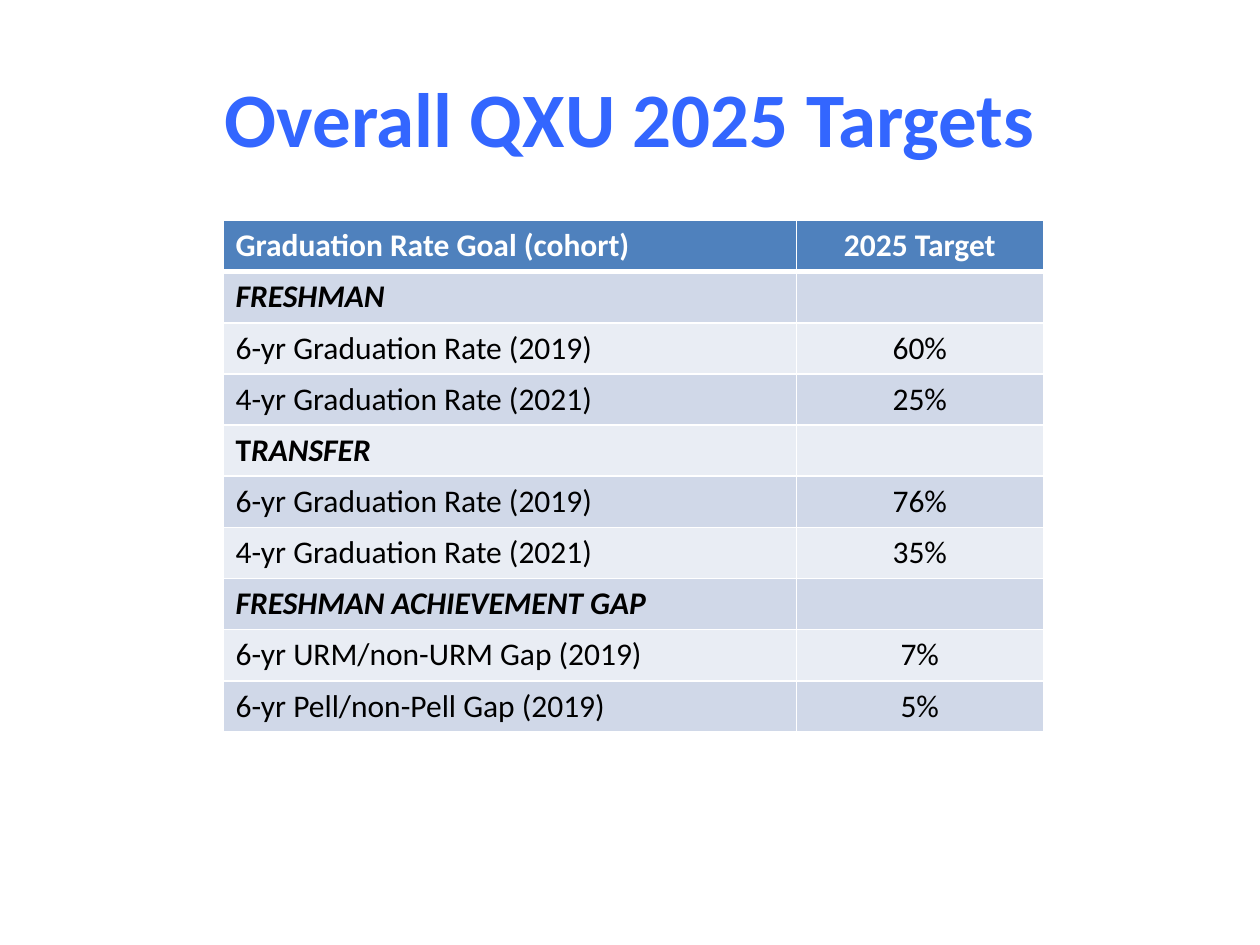
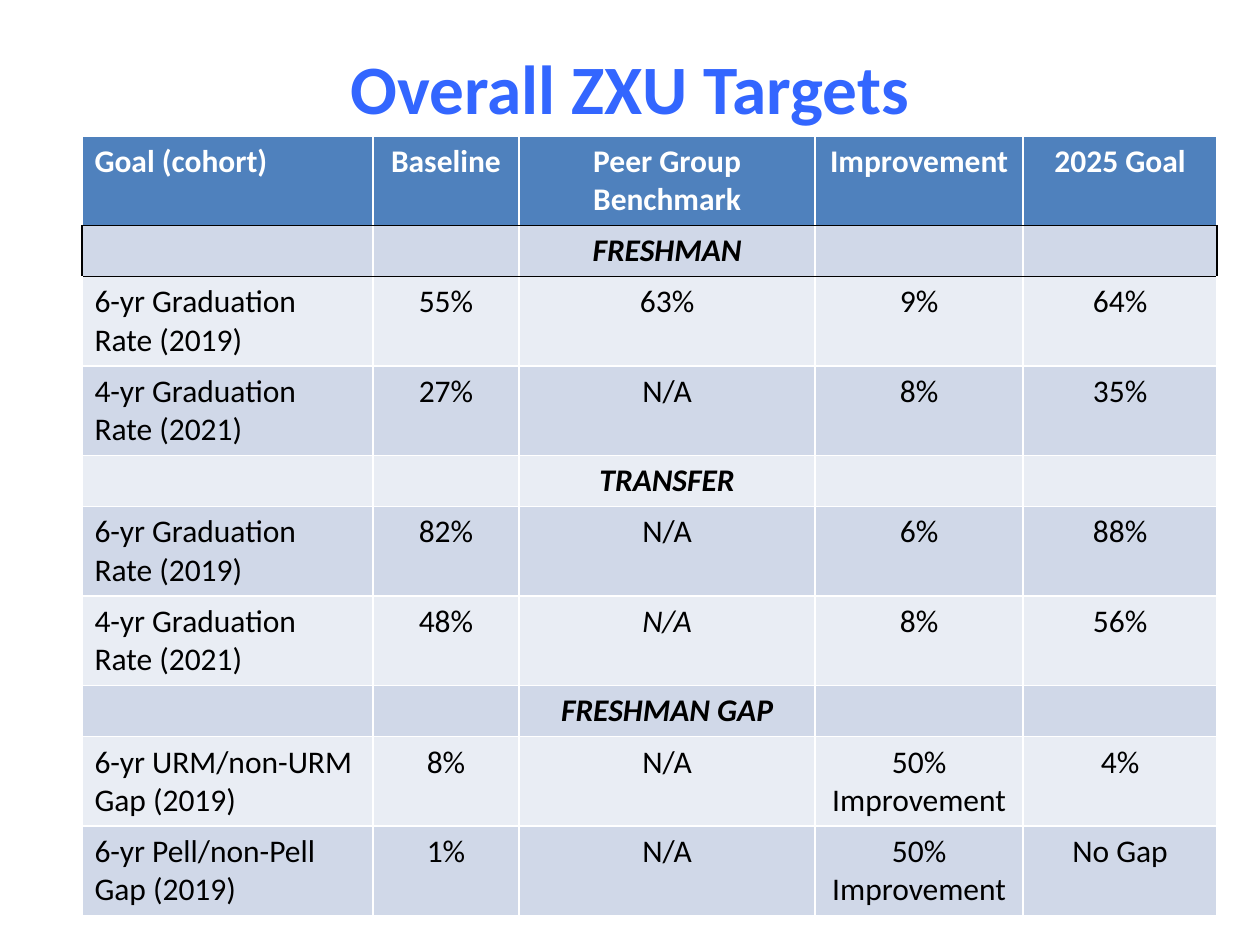
from lxml.etree import SubElement
from pptx import Presentation
from pptx.dml.color import RGBColor
from pptx.enum.text import MSO_ANCHOR, PP_ALIGN
from pptx.oxml.ns import qn
from pptx.util import Inches, Pt

COLORS = {"title": "3366FF", "header": "4F81BD", "odd": "D0D8E8",
          "even": "E9EDF4", "white": "FFFFFF", "black": "000000"}
FONT = "Calibri"
BODY_SIZE = 18
GRID_COLUMNS, GRID_ROWS = 100, 75


class TargetDeck:
    """Holds the style and the current slide; lengths are grid units."""

    def __init__(self):
        self.deck = Presentation()
        self.deck.slide_width, self.deck.slide_height = Inches(10), Inches(7.5)
        self.page = None

    def columns(self, count):
        return round(self.deck.slide_width * count / GRID_COLUMNS)

    def rows(self, count):
        return round(self.deck.slide_height * count / GRID_ROWS)

    def add_page(self):
        self.page = self.deck.slides.add_slide(self.deck.slide_layouts[6])

    def format_span(self, span, size, color, bold, italic=False):
        span.font.name, span.font.size = FONT, Pt(size)
        span.font.bold, span.font.italic = bold, italic
        span.font.color.rgb = RGBColor.from_string(COLORS[color])

    def title(self, text, height, size):
        box = self.page.shapes.add_textbox(
            self.columns(5), self.rows(3), self.columns(90), self.rows(height))
        frame = box.text_frame
        frame.word_wrap = True
        frame.vertical_anchor = MSO_ANCHOR.MIDDLE
        frame.text = text
        para = frame.paragraphs[0]
        para.alignment = PP_ALIGN.CENTER
        self.format_span(para.runs[0], size, "title", True)

    def border(self, cell, edges):
        properties = cell._tc.get_or_add_tcPr()
        for side in "LRTB":
            color, width = edges.get(side, ("white", 1))
            line = SubElement(properties, qn(f"a:ln{side}"), w=str(Pt(width)))
            fill = SubElement(line, qn("a:solidFill"))
            SubElement(fill, qn("a:srgbClr"), val=COLORS[color])

    def fill_cell(self, cell, content, row, centered, section):
        """Content is a string, or (text, italic) pairs for mixed emphasis."""
        band = "header" if row == 0 else "odd" if row % 2 else "even"
        cell.fill.solid()
        cell.fill.fore_color.rgb = RGBColor.from_string(COLORS[band])
        para = cell.text_frame.paragraphs[0]
        para.alignment = PP_ALIGN.CENTER if centered else PP_ALIGN.LEFT
        pieces = ((content, section),) if isinstance(content, str) else content
        for text, italic in pieces:
            if text:
                span = para.add_run()
                span.text = text
                self.format_span(span, BODY_SIZE, "white" if row == 0 else "black",
                                 row == 0 or section, italic)

    def table(self, left, top, widths, heights, data, edges_at):
        table = self.page.shapes.add_table(
            len(data), len(widths), self.columns(left), self.rows(top),
            self.columns(sum(widths)), self.rows(sum(heights))).table
        table.first_row = table.horz_banding = False
        for column, width in zip(table.columns, widths):
            column.width = self.columns(width)
        for row, (values, height) in enumerate(zip(data, heights)):
            table.rows[row].height = self.rows(height)
            section = is_section(values)
            for col, content in enumerate(values):
                cell = table.cell(row, col)
                self.border(cell, edges_at(row, col))
                self.fill_cell(cell, content, row, col > 0, section)


def is_section(values):
    return "" in values


def heavy_header(row, col):
    """Thick white rule between the header and the first section."""
    if row == 0:
        return {"B": ("white", 3)}
    return {"T": ("white", 3)} if row == 1 else {}


def framed_section(row, col):
    """Black frame round the first section row."""
    black = ("black", 1)
    if row == 0:
        return {"B": black}
    if row == 2:
        return {"T": black}
    if row != 1:
        return {}
    edges = {"T": black, "B": black}
    if col == 0:
        edges["L"] = black
    if col == len(CAMPUS_WIDTHS) - 1:
        edges["R"] = black
    return edges


SIX_YEAR = "6-yr Graduation Rate (2019)"
FOUR_YEAR = "4-yr Graduation Rate (2021)"
URM_GAP = "6-yr URM/non-URM Gap (2019)"
PELL_GAP = "6-yr Pell/non-Pell Gap (2019)"
HALVED = "50% Improvement"

SYSTEM_TARGETS = [
    ("Graduation Rate Goal (cohort)", "2025 Target"),
    ("FRESHMAN", ""),
    (SIX_YEAR, "60%"),
    (FOUR_YEAR, "25%"),
    ((("T", False), ("RANSFER", True)), ""),
    (SIX_YEAR, "76%"),
    (FOUR_YEAR, "35%"),
    ("FRESHMAN ACHIEVEMENT GAP", ""),
    (URM_GAP, "7%"),
    (PELL_GAP, "5%"),
]
CAMPUS_TARGETS = [
    ("Goal (cohort)", "Baseline", "Peer Group Benchmark", "Improvement", "2025 Goal"),
    ("", "", "FRESHMAN", "", ""),
    (SIX_YEAR, "55%", "63%", "9%", "64%"),
    (FOUR_YEAR, "27%", "N/A", "8%", "35%"),
    ("", "", "TRANSFER", "", ""),
    (SIX_YEAR, "82%", "N/A", "6%", "88%"),
    (FOUR_YEAR, "48%", (("N/A", True),), "8%", "56%"),
    ("", "", "FRESHMAN GAP", "", ""),
    (URM_GAP, "8%", "N/A", HALVED, "4%"),
    (PELL_GAP, "1%", "N/A", HALVED, "No Gap"),
]
SYSTEM_WIDTHS = (45.5, 19.6)
CAMPUS_WIDTHS = (23.1, 11.6, 23.5, 16.5, 15.4)
ONE_LINE, TWO_LINES = 4.06, 7.1


def main():
    targets = TargetDeck()

    # System-wide targets
    targets.add_page()
    targets.title("Overall QXU 2025 Targets", 12.5, 44)
    targets.table(17.7, 17.5, SYSTEM_WIDTHS, [ONE_LINE] * len(SYSTEM_TARGETS),
                  SYSTEM_TARGETS, heavy_header)

    # Campus targets
    targets.add_page()
    targets.title("Overall ZXU Targets", 7.8, 39.6)
    heights = [ONE_LINE if is_section(values) else TWO_LINES for values in CAMPUS_TARGETS]
    targets.table(6.5, 10.8, CAMPUS_WIDTHS, heights, CAMPUS_TARGETS, framed_section)

    targets.deck.save("out.pptx")


if __name__ == "__main__":
    main()
